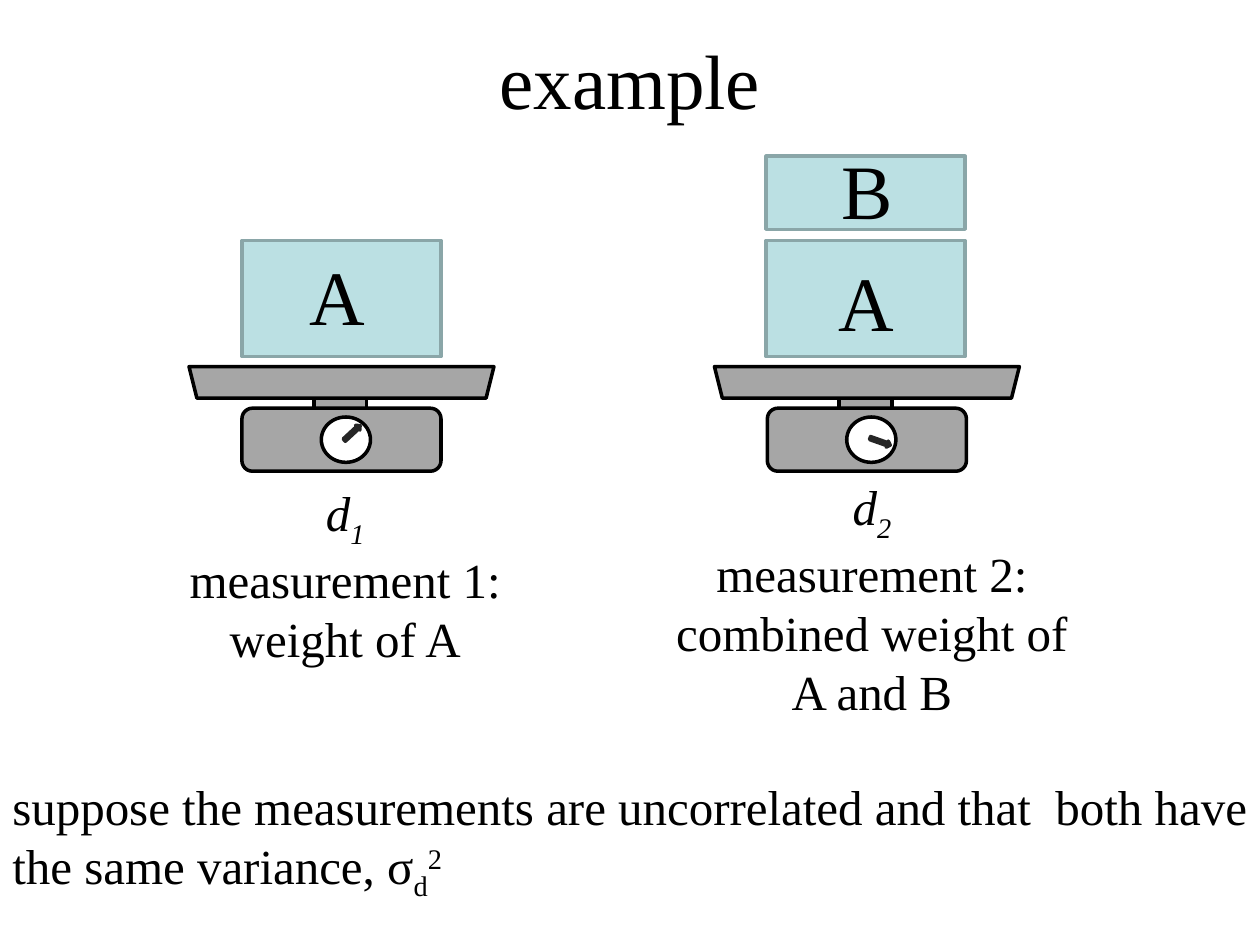
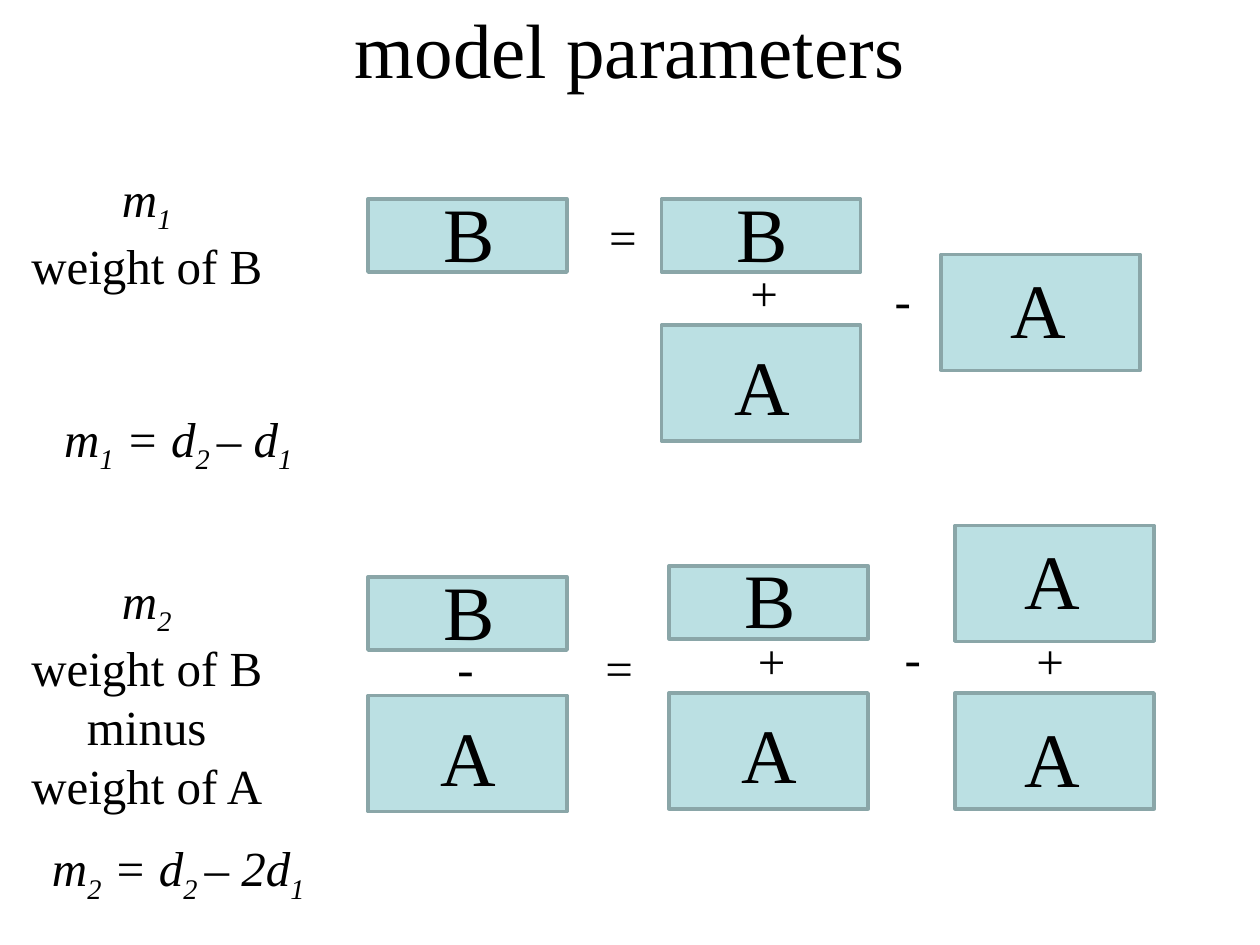
from dataclasses import dataclass
from typing import NamedTuple

from pptx import Presentation
from pptx.dml.color import RGBColor
from pptx.enum import shapes, text
from pptx.util import Inches, Pt


@dataclass(frozen=True)
class Theme:
    font: str = "Times New Roman"
    ink: str = "000000"
    block: str = "BBE0E3"
    block_edge: str = "8AA6A8"
    metal: str = "A6A6A6"
    dial: str = "FFFFFF"
    needle: str = "262626"
    title_size: int = 44
    body_size: int = 28
    line_width: int = 2


THEME = Theme()
SHAPE = shapes.MSO_SHAPE
CENTER, LEFT = text.PP_ALIGN.CENTER, text.PP_ALIGN.LEFT
SUB, SUPER = -25, 30


class Run(NamedTuple):
    text: str
    italic: bool = False
    base: int = 0


class Box(NamedTuple):
    left: float
    top: float
    width: float
    height: float


@dataclass(frozen=True)
class Block:
    letter: str
    left: float
    top: float
    dx: float = 0.48  # offset of the letter from the block corner
    dy: float = 0.06


@dataclass(frozen=True)
class Scale:
    left: float  # left edge of the pan
    needle_dx: float
    needle_top: float
    angle: float
    blocks: tuple[Block, ...]


BLOCK_WIDTH = 1.58
BLOCK_HEIGHTS = {"A": 0.92, "B": 0.58}


def block_b(left: float, top: float) -> Block:
    return Block("B", left, top, 0.5, -0.16)


def symbol(name: str, index: str) -> list[Run]:
    return [Run(name, True), Run(index, True, SUB)]


# Drawing helpers
def add_text(parent, box: Box, paragraphs: list[list[Run]], size: int = THEME.body_size,
             align=CENTER, anchor=text.MSO_ANCHOR.MIDDLE):
    s = parent.add_textbox(*map(Inches, box))
    tf = s.text_frame
    tf.word_wrap = True
    tf.vertical_anchor = anchor
    for i, runs in enumerate(paragraphs):
        p = tf.add_paragraph() if i else tf.paragraphs[0]
        p.alignment = align
        for run in runs:
            r = p.add_run()
            r.text = run.text
            r.font.name = THEME.font
            r.font.size = Pt(size)
            r.font.italic = run.italic
            r.font.color.rgb = RGBColor.from_string(THEME.ink)
            if run.base:
                r._r.get_or_add_rPr().set("baseline", str(run.base * 1000))
    return s


def add_part(parent, kind, box: Box, fill: str, line: str = THEME.ink, angle: float = 0) -> None:
    s = parent.add_shape(kind, *map(Inches, box))
    s.shadow.inherit = False
    s.fill.solid()
    s.fill.fore_color.rgb = RGBColor.from_string(fill)
    s.line.color.rgb = RGBColor.from_string(line)
    s.line.width = Pt(THEME.line_width)
    s.rotation = angle


def add_block(slide, block: Block) -> None:
    group = slide.shapes.add_group_shape().shapes
    add_part(group, SHAPE.RECTANGLE,
             Box(block.left, block.top, BLOCK_WIDTH, BLOCK_HEIGHTS[block.letter]),
             THEME.block, THEME.block_edge)
    s = add_text(group, Box(block.left + block.dx, block.top + block.dy, 0.83, 0.84),
                 [[Run(block.letter)]], THEME.title_size, LEFT, text.MSO_ANCHOR.TOP)
    s.text_frame.auto_size = text.MSO_AUTO_SIZE.SHAPE_TO_FIT_TEXT


def add_scale(slide, scale: Scale) -> None:
    group = slide.shapes.add_group_shape().shapes
    x = scale.left
    add_part(group, SHAPE.RECTANGLE, Box(x + 0.99, 3.08, 0.42, 0.25), THEME.metal)
    add_part(group, SHAPE.ROUNDED_RECTANGLE, Box(x + 0.42, 3.24, 1.58, 0.5), THEME.metal)
    add_part(group, SHAPE.TRAPEZOID, Box(x, 2.91, 2.42, 0.25), THEME.metal, angle=180)
    add_part(group, SHAPE.OVAL, Box(x + 1.05, 3.31, 0.39, 0.36), THEME.dial)
    add_part(group, SHAPE.RIGHT_ARROW, Box(x + scale.needle_dx, scale.needle_top, 0.17, 0.05),
             THEME.metal, THEME.needle, scale.angle)
    for block in scale.blocks:
        add_block(slide, block)


def add_slide(prs, title: str, title_height: float):
    slide = prs.slides.add_slide(prs.slide_layouts[6])
    add_text(slide.shapes, Box(0, 0, 10, title_height), [[Run(title)]], THEME.title_size)
    return slide


# Slide 1: two weighings
def build_example(prs) -> None:
    slide = add_slide(prs, "example", 1.25)
    for scale in (
        Scale(1.5, 1.21, 3.41, 317.3, (Block("A", 1.92, 1.91, 0.44, 0.01),)),
        Scale(5.67, 1.23, 3.48, 19.5, (Block("A", 6.08, 1.91), block_b(6.08, 1.24))),
    ):
        add_scale(slide, scale)
    for box, index, caption in (
        (Box(0.95, 3.73, 3.58, 1.67), "1", "measurement 1: weight of A"),
        (Box(5.13, 3.5, 3.58, 2.5), "2", "measurement 2: combined weight of A and B"),
    ):
        add_text(slide.shapes, box, [symbol("d", index), [Run(caption)]])
    add_text(slide.shapes, Box(0, 5.83, 10, 1.67), [[
        Run("suppose the measurements are uncorrelated and that  both have the same variance, σ"),
        Run("d", base=SUB), Run("2", base=SUPER)]], align=LEFT)


# Slide 2: parameters as sums and differences of blocks
def build_parameters(prs) -> None:
    slide = add_slide(prs, "model parameters", 0.75)
    for index, top, meaning, formula_top, factor in (
        ("1", 1.17, ["weight of B"], 3.17, ""),
        ("2", 4.83, ["weight of B", "minus", "weight of A"], 6.58, "2"),
    ):
        add_text(slide.shapes, Box(0, top, 2.33, 1.33),
                 [symbol("m", index)] + [[Run(line)] for line in meaning])
        add_text(slide.shapes, Box(0, formula_top, 2.83, 0.67),
                 [symbol("m", index) + symbol(" = d", "2 ") + symbol(f"– {factor}d", "1")])

    for block in (
        # m1 row
        block_b(2.92, 1.58), block_b(5.25, 1.58), Block("A", 5.25, 2.58),
        Block("A", 7.47, 2.02, 0.45, 0.01),
        # m2 row
        block_b(2.92, 4.58), Block("A", 2.92, 5.52),
        block_b(5.31, 4.49), Block("A", 5.31, 5.5),
        Block("A", 7.58, 4.17, 0.45, 0.01), Block("A", 7.58, 5.5, 0.45, 0.09),
    ):
        add_block(slide, block)

    for sign, left, top in (
        ("=", 4.53, 1.58), ("+", 5.65, 2.03), ("-", 6.75, 2.08),
        ("-", 3.28, 5), ("=", 4.5, 5), ("+", 5.71, 4.95), ("-", 6.83, 4.92), ("+", 7.92, 4.95),
    ):
        add_text(slide.shapes, Box(left, top, 0.83, 0.58), [[Run(sign)]])


def main() -> None:
    prs = Presentation()
    prs.slide_width, prs.slide_height = Inches(10), Inches(7.5)
    build_example(prs)
    build_parameters(prs)
    prs.save("out.pptx")


if __name__ == "__main__":
    main()
